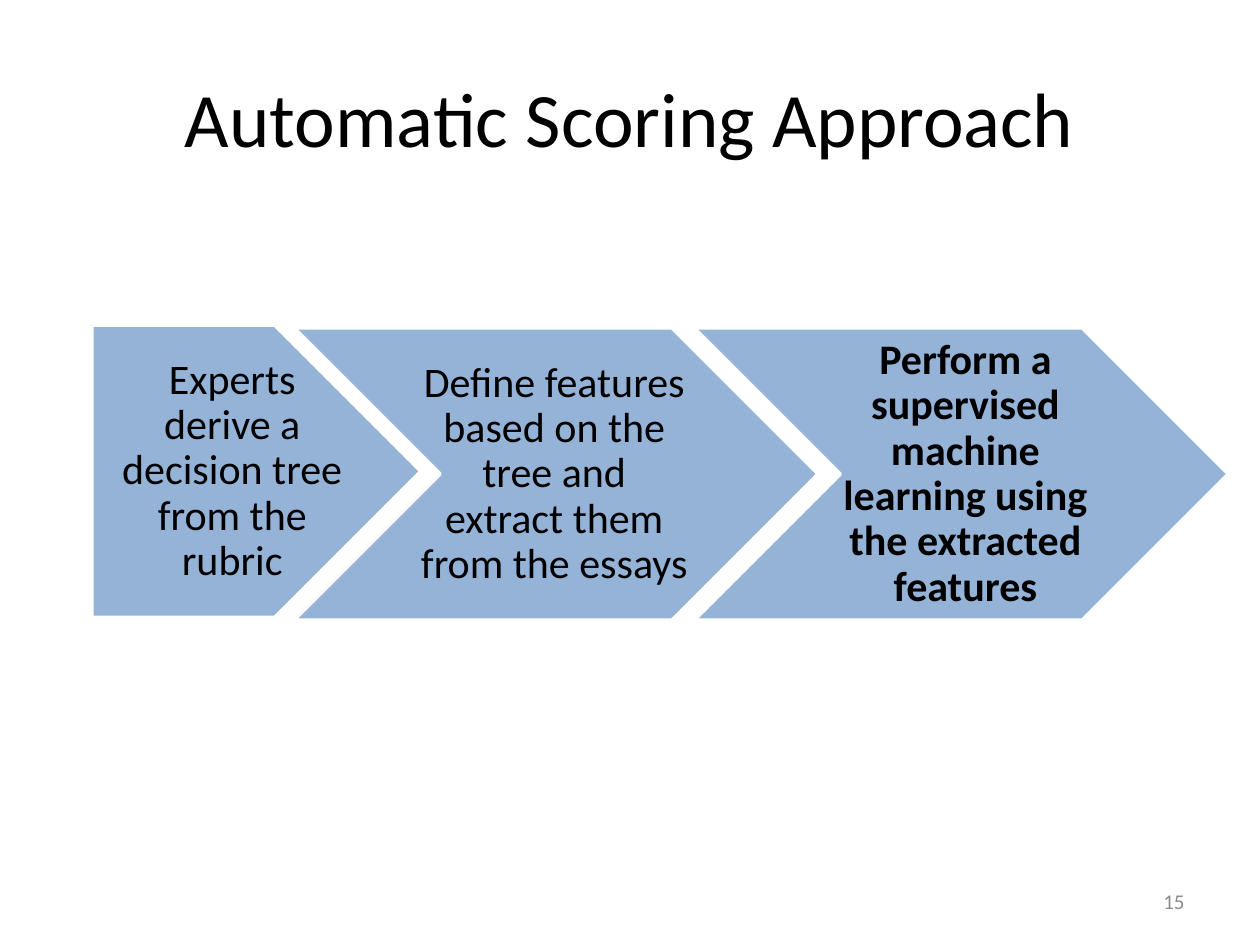
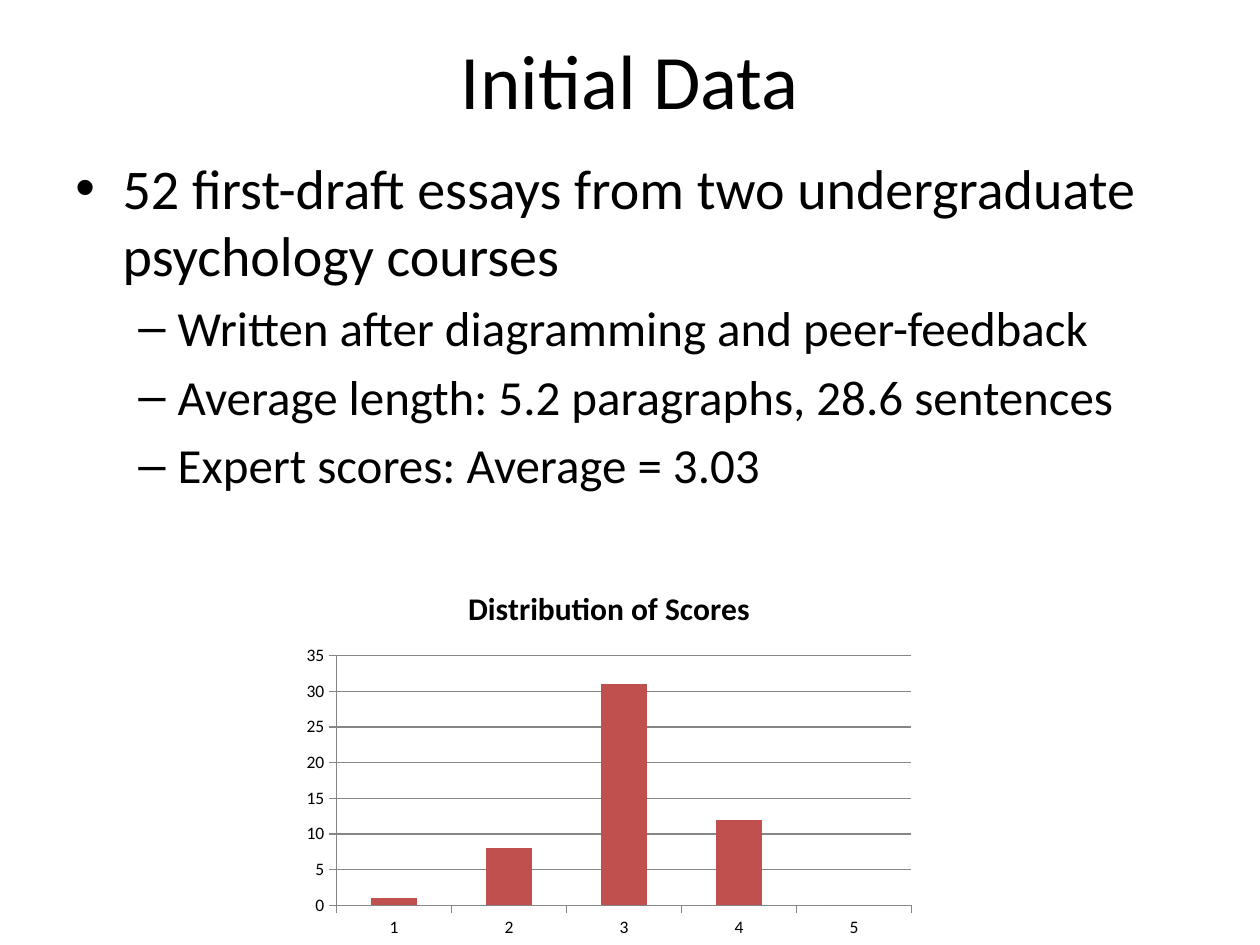
"""Build two slides on automatic essay scoring."""
from dataclasses import dataclass
from typing import Any, NamedTuple

from lxml import etree
from pptx import Presentation
from pptx.chart.data import CategoryChartData
from pptx.dml.color import RGBColor
from pptx.enum.chart import XL_CHART_TYPE, XL_TICK_MARK
from pptx.enum.shapes import MSO_SHAPE
from pptx.enum.text import MSO_ANCHOR, PP_ALIGN
from pptx.oxml.ns import qn
from pptx.util import Pt

CENTER, RIGHT, LEFT = PP_ALIGN.CENTER, PP_ALIGN.RIGHT, PP_ALIGN.LEFT
MIDDLE, TOP = MSO_ANCHOR.MIDDLE, MSO_ANCHOR.TOP
PENTAGON, CHEVRON = MSO_SHAPE.PENTAGON, MSO_SHAPE.CHEVRON
COLUMNS = XL_CHART_TYPE.COLUMN_CLUSTERED
TICK_OUTSIDE = XL_TICK_MARK.OUTSIDE

FONT = "Calibri"
BLACK, WHITE, BLUE, RED = "000000", "FFFFFF", "95B3D7", "C0504D"
NUMBER_GRAY, AXIS_GRAY = "8C8C8C", "868686"
STEP_HEIGHT = 167


class Box(NamedTuple):
    """Left, top, width and height in points."""

    left: float
    top: float
    width: float
    height: float

    def lengths(self) -> list[Pt]:
        """Return the four lengths for python-pptx."""
        return [Pt(value) for value in self]


@dataclass(frozen=True)
class Step:
    """One arrow of the process with its label."""

    text: str
    outline: Any
    arrow: Box
    label: Box
    left_margin: float = 8.5
    bold: bool = False


@dataclass(frozen=True)
class Bullet:
    """One bulleted paragraph."""

    text: str
    level: int = 1


@dataclass(frozen=True)
class BulletStyle:
    """Look of one bullet level, in points."""

    symbol: str
    size: float
    indent: float
    hanging: float


STEPS = (
    Step("Experts derive a decision tree from the rubric", PENTAGON,
         Box(52.5, 185.8, 188, STEP_HEIGHT), Box(52.5, 185.8, 152, STEP_HEIGHT), 11.5),
    Step("Define features based on the tree and extract them from the essays", CHEVRON,
         Box(168, 187.4, 299.5, STEP_HEIGHT), Box(232, 187.4, 164, STEP_HEIGHT)),
    Step("Perform a supervised machine learning using the extracted features", CHEVRON,
         Box(396.7, 187.4, 305.3, STEP_HEIGHT), Box(468.7, 187.4, 160.5, STEP_HEIGHT),
         bold=True),
)
BULLET_STYLES = (BulletStyle("•", 32, 27, 27), BulletStyle("–", 28, 58.5, 22.5))
BULLETS = (
    Bullet("52 first-draft essays from two undergraduate psychology courses", 0),
    Bullet("Written after diagramming and peer-feedback"),
    Bullet("Average length: 5.2 paragraphs, 28.6 sentences"),
    Bullet("Expert scores: Average = 3.03"),
)
SCORE_COUNTS = {"1": 1, "2": 8, "3": 31, "4": 12, "5": 0}


def color(value: str) -> RGBColor:
    """Turn a hex string into a colour."""
    return RGBColor.from_string(value)


def apply(target: Any, formats: dict[str, Any]) -> None:
    """Set every named attribute on the target."""
    for name, value in formats.items():
        setattr(target, name, value)


def style_font(font: Any, size: float, fill: str = BLACK, bold: bool = False) -> None:
    """Give a font the shared face, and a size, colour and weight."""
    apply(font, {"name": FONT, "size": Pt(size), "bold": bold})
    font.color.rgb = color(fill)


def add_title(presentation: Any, text: str, top: float) -> Any:
    """Add a title-only slide and return it."""
    slide = presentation.slides.add_slide(presentation.slide_layouts[5])
    title = slide.shapes.title
    left, top_length, width, height = Box(36, top, 648, 90).lengths()
    apply(title, {"left": left, "top": top_length, "width": width, "height": height})
    title.text_frame.text = text
    title.text_frame.vertical_anchor = MIDDLE
    paragraph = title.text_frame.paragraphs[0]
    paragraph.alignment = CENTER
    style_font(paragraph.runs[0].font, 44)
    return slide


def add_text_frame(slide: Any, box: Box, anchor: Any) -> Any:
    """Add a wrapping text box and return its frame."""
    frame = slide.shapes.add_textbox(*box.lengths()).text_frame
    apply(frame, {"word_wrap": True, "vertical_anchor": anchor})
    return frame


def write(paragraph: Any, text: str, size: float, alignment: Any,
          fill: str = BLACK, bold: bool = False) -> None:
    """Write one styled run into a paragraph."""
    paragraph.alignment = alignment
    run = paragraph.add_run()
    run.text = text
    style_font(run.font, size, fill, bold)


def add_step(slide: Any, step: Step) -> None:
    """Draw a process arrow and its label."""
    arrow = slide.shapes.add_shape(step.outline, *step.arrow.lengths())
    arrow.shadow.inherit = False
    arrow.fill.solid()
    arrow.fill.fore_color.rgb = color(BLUE)
    arrow.line.color.rgb = color(WHITE)
    arrow.line.width = Pt(2)
    frame = add_text_frame(slide, step.label, MIDDLE)
    apply(frame, {"margin_left": Pt(step.left_margin), "margin_right": Pt(3),
                  "margin_top": Pt(5.75), "margin_bottom": Pt(5.75)})
    paragraph = frame.paragraphs[0]
    paragraph.line_spacing = 0.9
    write(paragraph, step.text, 24, CENTER, bold=step.bold)


def add_bullets(slide: Any, box: Box, bullets: tuple[Bullet, ...]) -> None:
    """Write a two-level bulleted list."""
    frame = add_text_frame(slide, box, TOP)
    for index, bullet in enumerate(bullets):
        paragraph = frame.add_paragraph() if index else frame.paragraphs[0]
        style = BULLET_STYLES[bullet.level]
        apply(paragraph, {"level": bullet.level, "space_before": Pt(style.size * 0.2)})
        write(paragraph, bullet.text, style.size, LEFT)
        properties = paragraph._p.get_or_add_pPr()
        properties.set("marL", str(Pt(style.indent)))
        properties.set("indent", str(-Pt(style.hanging)))
        etree.SubElement(properties, qn("a:buFont"), typeface="Arial")
        etree.SubElement(properties, qn("a:buChar"), char=style.symbol)


def add_score_chart(slide: Any, box: Box) -> None:
    """Draw the column chart of the score distribution."""
    data = CategoryChartData()
    data.categories = list(SCORE_COUNTS)
    data.add_series("Series 1", list(SCORE_COUNTS.values()))
    chart = slide.shapes.add_chart(COLUMNS, *box.lengths(), data).chart
    style_font(chart.font, 10)
    apply(chart, {"has_legend": False, "has_title": True})
    chart.chart_title.include_in_layout = False
    write(chart.chart_title.text_frame.paragraphs[0], "Distribution of Scores", 18,
          CENTER, bold=True)
    plot = chart.plots[0]
    apply(plot, {"gap_width": 150, "vary_by_categories": False})
    column_fill = plot.series[0].format.fill
    column_fill.solid()
    column_fill.fore_color.rgb = color(RED)
    apply(chart.value_axis, {"minimum_scale": 0, "maximum_scale": 35, "major_unit": 5,
                             "has_major_gridlines": True})
    for axis in (chart.category_axis, chart.value_axis):
        axis.major_tick_mark = TICK_OUTSIDE
    for line in (chart.category_axis.format.line, chart.value_axis.format.line,
                 chart.value_axis.major_gridlines.format.line):
        line.color.rgb = color(AXIS_GRAY)
        line.width = Pt(0.75)


def main() -> None:
    """Build and save the presentation."""
    presentation = Presentation()
    apply(presentation, {"slide_width": Pt(720), "slide_height": Pt(540)})

    approach = add_title(presentation, "Automatic Scoring Approach", 21.6)
    number = add_text_frame(approach, Box(516, 500.5, 168, 28.75), MIDDLE)
    write(number.paragraphs[0], "15", 12, RIGHT, NUMBER_GRAY)
    for step in STEPS:
        add_step(approach, step)

    initial_data = add_title(presentation, "Initial Data", 0)
    add_bullets(initial_data, Box(36, 84, 648, 356.4), BULLETS)
    add_score_chart(initial_data, Box(168, 324, 360, 216))

    presentation.save("out.pptx")


if __name__ == "__main__":
    main()
